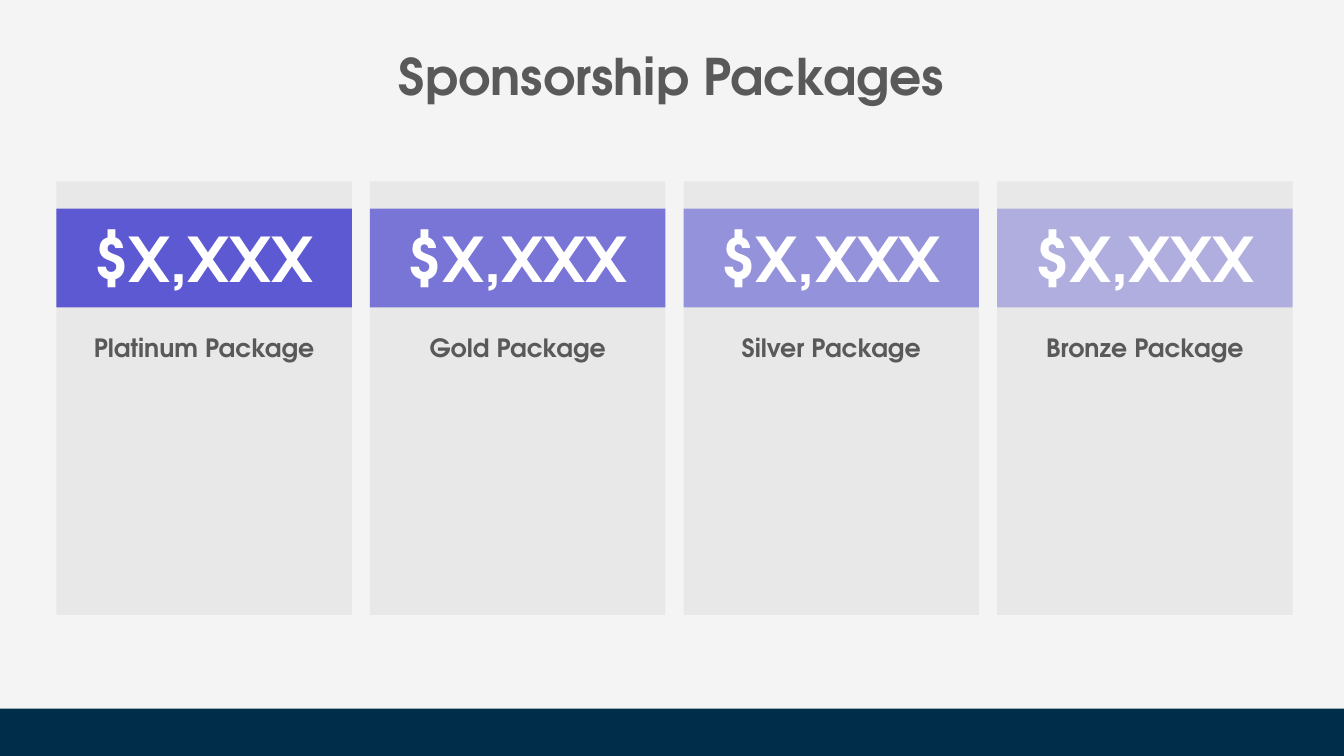
from dataclasses import dataclass

from lxml import etree
from pptx import Presentation
from pptx.dml.color import RGBColor
from pptx.enum.shapes import MSO_SHAPE
from pptx.enum.text import MSO_ANCHOR, PP_ALIGN
from pptx.oxml.ns import qn
from pptx.util import Inches, Pt

RECT = MSO_SHAPE.RECTANGLE
TOP, MIDDLE = MSO_ANCHOR.TOP, MSO_ANCHOR.MIDDLE
CENTER = PP_ALIGN.CENTER


@dataclass(frozen=True)
class Theme:
    font: str = "TeX Gyre Adventor"
    background: str = "F4F4F4"
    card: str = "E7E6E6"
    accent: str = "5C59D3"
    footer: str = "002D4A"
    text: str = "595959"
    white: str = "FFFFFF"
    title_size: int = 36
    price_size: int = 44
    name_size: int = 18


theme = Theme()


def add_rect(s, left, top, width, height, color, opacity=100):
    sp = s.shapes.add_shape(RECT, Inches(left), Inches(top), Inches(width), Inches(height))
    sp.shadow.inherit = False
    sp.line.fill.background()
    sp.fill.solid()
    sp.fill.fore_color.rgb = RGBColor.from_string(color)
    if opacity < 100:
        clr = sp.fill._xPr.find(qn("a:solidFill")).find(qn("a:srgbClr"))
        etree.SubElement(clr, qn("a:alpha")).set("val", str(opacity * 1000))
    return sp


def set_text(sp, text, size, color, anchor, insets=(0.1, 0.05, 0.1, 0.05)):
    tf = sp.text_frame
    tf.word_wrap = True
    tf.vertical_anchor = anchor
    tf.margin_left, tf.margin_top, tf.margin_right, tf.margin_bottom = map(Inches, insets)
    p = tf.paragraphs[0]
    p.alignment = CENTER
    r = p.add_run()
    r.text = text
    r.font.name = theme.font
    r.font.size = Pt(size)
    r.font.bold = True
    r.font.color.rgb = RGBColor.from_string(color)


# Slide and background
prs = Presentation()
prs.slide_width, prs.slide_height = Inches(13.33), Inches(7.5)
s = prs.slides.add_slide(prs.slide_layouts[6])
s.background.fill.solid()
s.background.fill.fore_color.rgb = RGBColor.from_string(theme.background)

# Title
title = s.shapes.add_textbox(Inches(2.82), Inches(0.4), Inches(7.68), Inches(0.71))
set_text(title, "Sponsorship Packages", theme.title_size, theme.text, TOP)

# Package cards, each with a price band that fades from left to right
packages = [("Platinum", 100), ("Gold", 80), ("Silver", 60), ("Bronze", 40)]
card_left, card_pitch, card_width = 0.56, 3.11, 2.93
for i, (level, opacity) in enumerate(packages):
    left = card_left + i * card_pitch
    card = add_rect(s, left, 1.8, card_width, 4.3, theme.card, 80)
    set_text(card, f"{level} Package", theme.name_size, theme.text, TOP, (0.3, 1.5, 0.3, 0.3))
    band = add_rect(s, left, 2.07, card_width, 0.98, theme.accent, opacity)
    set_text(band, "$X,XXX", theme.price_size, theme.white, MIDDLE)

# Footer bar
add_rect(s, 0, 7.03, 13.33, 0.47, theme.footer)

prs.save("out.pptx")
